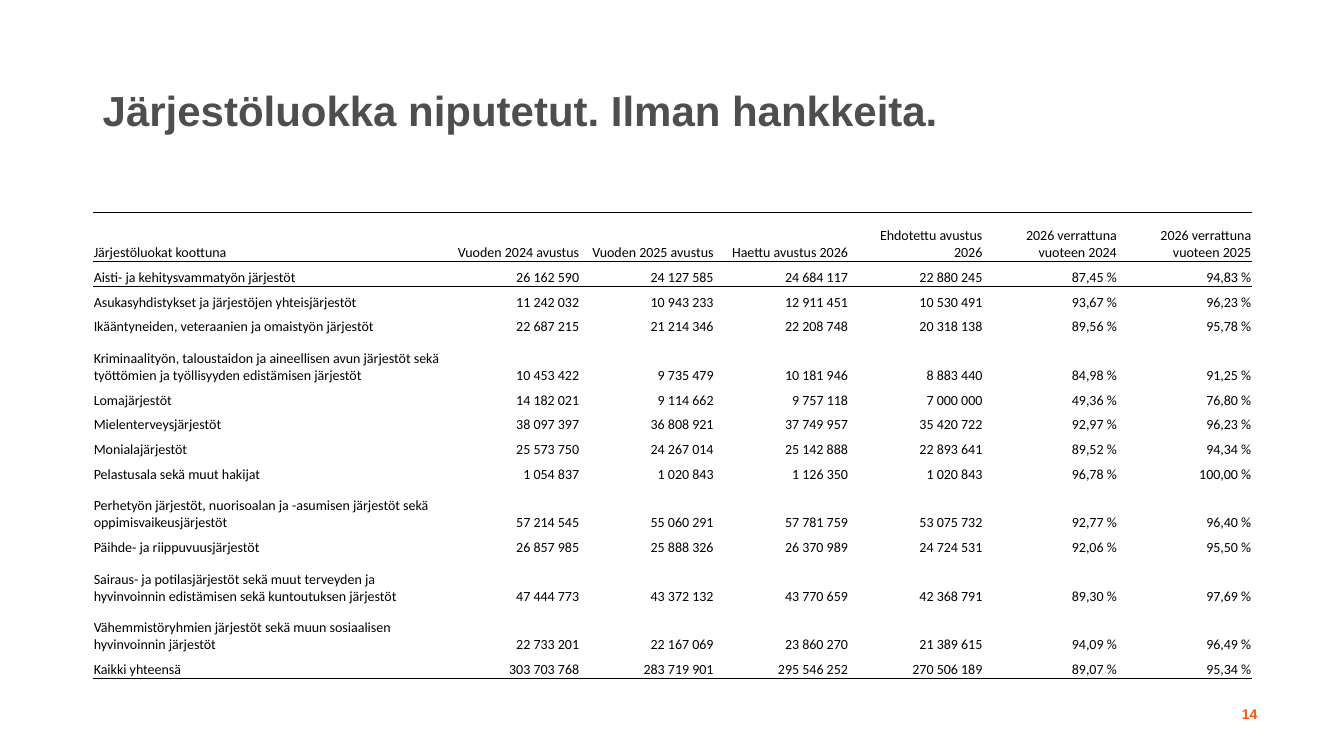
from dataclasses import dataclass
from typing import Any, NamedTuple

from lxml import etree
from pptx import Presentation
from pptx.dml.color import RGBColor
from pptx.enum.text import MSO_ANCHOR, PP_ALIGN
from pptx.oxml.ns import qn
from pptx.util import Inches, Pt

LEFT, RIGHT = PP_ALIGN.LEFT, PP_ALIGN.RIGHT
TOP, MIDDLE, BOTTOM = MSO_ANCHOR.TOP, MSO_ANCHOR.MIDDLE, MSO_ANCHOR.BOTTOM
PLAIN_STYLE = "{2D5ABB26-0587-4C30-8999-92F81FD0307C}"


@dataclass(frozen=True)
class Theme:
    title: str = "4D4F4F"
    accent: str = "FD5705"
    ink: str = "000000"
    head_font: str = "Arial"
    body_font: str = "Calibri"
    title_size: float = 30
    small_size: float = 10
    rule: float = 0.5


class Label(NamedTuple):
    text: str
    box: tuple[float, float, float, float]
    size: float
    color: str
    align: PP_ALIGN
    anchor: MSO_ANCHOR
    spacing: float


class Group(NamedTuple):
    name: str
    y2024: int
    y2025: int
    asked: int
    given: int


THEME = Theme()

LABELS = [
    Label("Järjestöluokka niputetut. Ilman hankkeita.", (0.92, 0.4, 8.99, 1.45),
          THEME.title_size, THEME.title, LEFT, MIDDLE, 0.9),
    Label("14", (11.69, 6.95, 0.88, 0.4),
          THEME.small_size, THEME.accent, RIGHT, TOP, 1.0),
]

HEADER = [
    "Järjestöluokat koottuna",
    "Vuoden 2024 avustus",
    "Vuoden 2025 avustus",
    "Haettu avustus 2026",
    "Ehdotettu avustus 2026",
    "2026 verrattuna vuoteen 2024",
    "2026 verrattuna vuoteen 2025",
]

GROUPS = [
    Group("Aisti- ja kehitysvammatyön järjestöt", 26162590, 24127585, 24684117, 22880245),
    Group("Asukasyhdistykset ja järjestöjen yhteisjärjestöt",
          11242032, 10943233, 12911451, 10530491),
    Group("Ikääntyneiden, veteraanien ja omaistyön järjestöt",
          22687215, 21214346, 22208748, 20318138),
    Group("Kriminaalityön, taloustaidon ja aineellisen avun järjestöt sekä "
          "työttömien ja työllisyyden edistämisen järjestöt",
          10453422, 9735479, 10181946, 8883440),
    Group("Lomajärjestöt", 14182021, 9114662, 9757118, 7000000),
    Group("Mielenterveysjärjestöt", 38097397, 36808921, 37749957, 35420722),
    Group("Monialajärjestöt", 25573750, 24267014, 25142888, 22893641),
    Group("Pelastusala sekä muut hakijat", 1054837, 1020843, 1126350, 1020843),
    Group("Perhetyön järjestöt, nuorisoalan ja -asumisen järjestöt sekä "
          "oppimisvaikeusjärjestöt", 57214545, 55060291, 57781759, 53075732),
    Group("Päihde- ja riippuvuusjärjestöt", 26857985, 25888326, 26370989, 24724531),
    Group("Sairaus- ja potilasjärjestöt sekä muut terveyden ja hyvinvoinnin "
          "edistämisen sekä kuntoutuksen järjestöt",
          47444773, 43372132, 43770659, 42368791),
    Group("Vähemmistöryhmien järjestöt sekä muun sosiaalisen hyvinvoinnin järjestöt",
          22733201, 22167069, 23860270, 21389615),
    Group("Kaikki yhteensä", 303703768, 283719901, 295546252, 270506189),
]

GRID_BOX = (0.92, 2.11, 11.5, 4.62)
NAME_WIDTH = 3.5
TALL_ROW = 0.48
LINE_CHARS = 60


def apply(target: Any, values: dict[str, Any]) -> None:
    for key, value in values.items():
        setattr(target, key, value)


def style(para: Any, text: str, font: str, size: float, color: str,
          bold: bool, align: PP_ALIGN) -> None:
    para.text = text
    para.alignment = align
    face = para.runs[0].font
    apply(face, {"name": font, "size": Pt(size), "bold": bold})
    face.color.rgb = RGBColor.from_string(color)


def add_label(slide: Any, label: Label) -> None:
    frame = slide.shapes.add_textbox(*map(Inches, label.box)).text_frame
    apply(frame, {"word_wrap": True, "vertical_anchor": label.anchor})
    para = frame.paragraphs[0]
    style(para, label.text, THEME.head_font, label.size, label.color, True, label.align)
    para.line_spacing = label.spacing


def amount(value: int) -> str:
    return f"{value:,}".replace(",", " ")


def ratio(part: int, whole: int) -> str:
    return f"{100 * part / whole:.2f} %".replace(".", ",")


def cells_of(group: Group) -> list[str]:
    return [group.name, *map(amount, group[1:]),
            ratio(group.given, group.y2024), ratio(group.given, group.y2025)]


def add_rule(cell: Any, side: str) -> None:
    line = etree.SubElement(cell._tc.get_or_add_tcPr(), qn(f"a:{side}"),
                            w=str(Pt(THEME.rule)))
    fill = etree.SubElement(line, qn("a:solidFill"))
    etree.SubElement(fill, qn("a:srgbClr"), val=THEME.ink)


def fill_cell(cell: Any, text: str, align: PP_ALIGN, sides: list[str]) -> None:
    edge = Inches(0.01)
    apply(cell, {"margin_left": edge, "margin_right": edge, "margin_top": edge,
                 "margin_bottom": 0, "vertical_anchor": BOTTOM})
    for side in sides:
        add_rule(cell, side)
    cell.fill.background()
    style(cell.text_frame.paragraphs[0], text, THEME.body_font,
          THEME.small_size, THEME.ink, False, align)


def add_grid(slide: Any) -> None:
    rows = [HEADER, *map(cells_of, GROUPS)]
    last = len(rows) - 1
    table = slide.shapes.add_table(len(rows), len(HEADER), *map(Inches, GRID_BOX)).table
    apply(table, {"first_row": False, "horz_banding": False})
    table._tbl.tblPr.find(qn("a:tableStyleId")).text = PLAIN_STYLE

    width, height = GRID_BOX[2:]
    rest = (width - NAME_WIDTH) / (len(HEADER) - 1)
    for index, column in enumerate(table.columns):
        column.width = Inches(rest if index else NAME_WIDTH)

    tall = [row is HEADER or len(row[0]) > LINE_CHARS for row in rows]
    short = (height - sum(tall) * TALL_ROW) / tall.count(False)
    for r, row in enumerate(rows):
        table.rows[r].height = Inches(TALL_ROW if tall[r] else short)
        sides = ["lnT"] * (r in (0, 1)) + ["lnB"] * (r in (0, last))
        for c, text in enumerate(row):
            fill_cell(table.cell(r, c), text, RIGHT if c else LEFT, sides)


def main() -> None:
    deck = Presentation()
    apply(deck, {"slide_width": Inches(13.33), "slide_height": Inches(7.5)})
    slide = deck.slides.add_slide(deck.slide_layouts[6])
    for label in LABELS:
        add_label(slide, label)
    add_grid(slide)
    deck.save("out.pptx")


if __name__ == "__main__":
    main()
